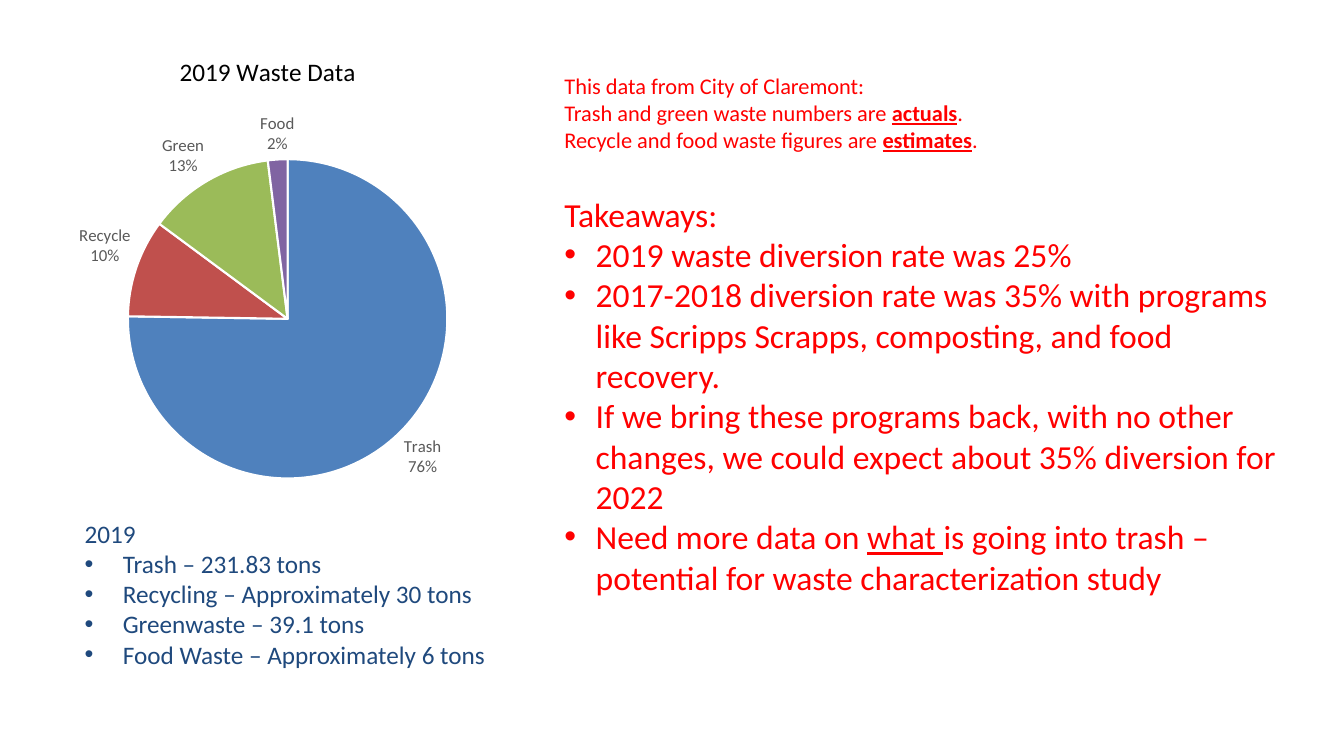
"""Build the 2019 waste data slide: a pie chart, its tonnages and the takeaways."""
from dataclasses import dataclass

from lxml.etree import SubElement, fromstring
from pptx import Presentation
from pptx.chart.data import CategoryChartData
from pptx.dml.color import RGBColor
from pptx.enum.chart import XL_CHART_TYPE, XL_LABEL_POSITION
from pptx.oxml.ns import qn
from pptx.util import Inches, Pt


@dataclass(frozen=True)
class Theme:
    """Hold the font, colours and type sizes."""
    font: str = "Calibri"
    black: str = "000000"
    white: str = "FFFFFF"
    label: str = "595959"
    navy: str = "1F497D"
    red: str = "FF0000"
    label_size: int = 12
    note_size: int = 16
    body_size: int = 18
    takeaway_size: int = 24
    gap: int = 29


@dataclass(frozen=True)
class Box:
    """Place an element, in inches."""
    left: float
    top: float
    width: float
    height: float

    def emu(self) -> tuple:
        """Return the four lengths for python-pptx."""
        return tuple(Inches(v) for v in (self.left, self.top, self.width, self.height))


@dataclass(frozen=True)
class Run:
    """Describe a stretch of text."""
    text: str
    bold: bool = False
    underline: bool = False


@dataclass(frozen=True)
class Para:
    """Describe a paragraph; an indent makes it a bullet."""
    runs: tuple
    size: int
    indent: float = 0
    before: int = 0


@dataclass(frozen=True)
class Slice:
    """Describe a pie slice."""
    name: str
    percent: int
    color: str


T = Theme()
SLICES = (
    Slice("Trash", 76, "4F81BD"),
    Slice("Recycle", 10, "C0504D"),
    Slice("Green", 13, "9BBB59"),
    Slice("Food", 2, "8064A2"),
)
TONS = (
    "Trash – 231.83 tons",
    "Recycling – Approximately 30 tons",
    "Greenwaste – 39.1 tons",
    "Food Waste – Approximately 6 tons",
)
NOTES = (
    (Run("This data from City of Claremont:"),),
    (Run("Trash and green waste numbers are "), Run("actuals", True, True), Run(".")),
    (Run("Recycle and food waste figures are "), Run("estimates", True, True), Run(".")),
)
TAKEAWAYS = (
    (Run("2019 waste diversion rate was 25%"),),
    (Run("2017-2018 diversion rate was 35% with programs like Scripps Scrapps, "
         "composting, and food recovery."),),
    (Run("If we bring these programs back, with no other changes, "
         "we could expect about 35% diversion for 2022"),),
    (Run("Need more data on "), Run("what ", underline=True),
     Run("is going into trash – potential for waste characterization study")),
)


def style_font(font, size: int, color: str) -> None:
    """Apply the theme font at a size and colour."""
    font.name, font.size = T.font, Pt(size)
    font.color.rgb = RGBColor.from_string(color)


def add_text(s, box: Box, paras: list[Para], color: str) -> None:
    """Add a wrapped text box, run by run."""
    tf = s.shapes.add_textbox(*box.emu()).text_frame
    tf.word_wrap = True
    for i, para in enumerate(paras):
        p = tf.add_paragraph() if i else tf.paragraphs[0]
        if para.indent:
            pPr = p._p.get_or_add_pPr()
            pPr.set("marL", str(Inches(para.indent)))
            pPr.set("indent", str(-Inches(para.indent)))
            SubElement(pPr, qn("a:buFont")).set("typeface", "Arial")
            SubElement(pPr, qn("a:buChar")).set("char", "•")
        if para.before:
            p.space_before = Pt(para.before)
        for run in para.runs:
            r = p.add_run()
            r.text = run.text
            style_font(r.font, para.size, color)
            r.font.bold, r.font.underline = run.bold, run.underline


def set_plot_layout(chart, x: float, y: float, w: float, h: float) -> None:
    """Fix the inner plot area as fractions of the chart."""
    plot_area = chart._chartSpace.chart.plotArea
    for old in plot_area.findall(qn("c:layout")):
        plot_area.remove(old)
    ns = "http://schemas.openxmlformats.org/drawingml/2006/chart"
    plot_area.insert(0, fromstring(
        f'<c:layout xmlns:c="{ns}"><c:manualLayout><c:layoutTarget val="inner"/>'
        '<c:xMode val="edge"/><c:yMode val="edge"/>'
        f'<c:x val="{x}"/><c:y val="{y}"/><c:w val="{w}"/><c:h val="{h}"/>'
        '</c:manualLayout></c:layout>'))


def add_pie(s, box: Box, title: str, slices: tuple[Slice, ...]) -> None:
    """Add the pie with category and percentage labels."""
    data = CategoryChartData()
    data.categories = [item.name for item in slices]
    data.add_series("Series 1", [item.percent for item in slices])
    chart = s.shapes.add_chart(XL_CHART_TYPE.PIE, *box.emu(), data).chart
    style_font(chart.font, 10, T.black)
    chart.has_legend = False
    chart.has_title = True
    r = chart.chart_title.text_frame.paragraphs[0].add_run()
    r.text = title
    style_font(r.font, T.body_size, T.black)
    r.font.bold = False
    set_plot_layout(chart, 0.22, 0.26, 0.64, 0.67)

    plot = chart.plots[0]
    plot.vary_by_categories = True
    for i, item in enumerate(slices):
        fmt = plot.series[0].points[i].format
        fmt.fill.solid()
        fmt.fill.fore_color.rgb = RGBColor.from_string(item.color)
        fmt.line.color.rgb = RGBColor.from_string(T.white)
        fmt.line.width = Pt(1.5)
    labels = plot.series[0].data_labels
    style_font(labels.font, T.label_size, T.label)
    labels.number_format, labels.number_format_is_linked = '0"%"', False
    labels.position = XL_LABEL_POSITION.OUTSIDE_END
    labels.show_category_name = labels.show_value = True
    separator = labels._element.makeelement(qn("c:separator"))
    separator.text = "\n"
    labels._element.find(qn("c:showBubbleSize")).addnext(separator)


def main() -> None:
    """Build and save the slide."""
    prs = Presentation()
    prs.slide_width, prs.slide_height = Inches(13.33), Inches(7.5)
    s = prs.slides.add_slide(prs.slide_layouts[6])
    add_pie(s, Box(0.18, 0.35, 4.95, 4.73), "2019 Waste Data", SLICES)
    tons = [Para((Run("2019"),), T.body_size)]
    tons += [Para((Run(text),), T.body_size, 0.38) for text in TONS]
    add_text(s, Box(0.74, 5.09, 5.42, 1.92), tons, T.navy)
    findings = [Para(runs, T.note_size) for runs in NOTES]
    findings.append(Para((Run("Takeaways:"),), T.takeaway_size, before=T.gap))
    findings += [Para(runs, T.takeaway_size, 0.31) for runs in TAKEAWAYS]
    add_text(s, Box(5.5, 0.67, 7.4, 6.36), findings, T.red)
    prs.save("out.pptx")


if __name__ == "__main__":
    main()
